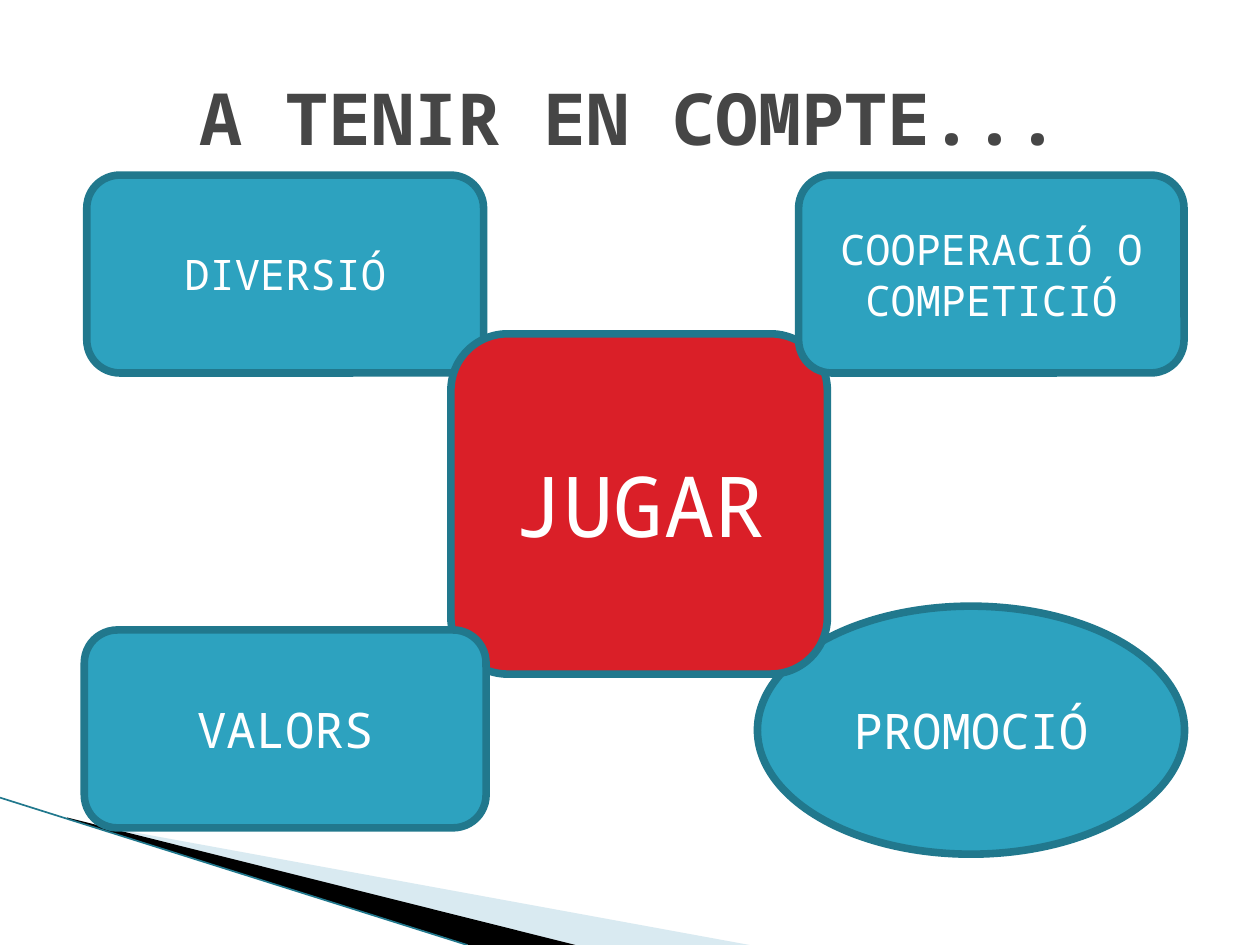
import pptx
import pptx.util
from lxml import etree
from pptx.dml.color import RGBColor
from pptx.enum.shapes import MSO_CONNECTOR, MSO_SHAPE
from pptx.enum.text import MSO_ANCHOR, PP_ALIGN
from pptx.oxml.ns import qn
from pptx.util import Cm

FONT = "Noto Sans Mono"
TEAL = RGBColor(0x2D, 0xA2, 0xBF)
DARK_TEAL = RGBColor(0x21, 0x78, 0x8D)
RED = RGBColor(0xDA, 0x1F, 0x28)
PALE_BLUE = RGBColor(0xA0, 0xCB, 0xDC)
BLACK = RGBColor(0, 0, 0)
WHITE = RGBColor(0xFF, 0xFF, 0xFF)
GREY = RGBColor(0x46, 0x46, 0x46)

TITLE = "A TENIR EN COMPTE..."
TITLE_BOX = (1.27, 0.76, 22.86, 3.18)

# Text, outline, fill, font size, (left, top, width, height) in cm
IDEAS = [
    ("DIVERSIÓ", MSO_SHAPE.ROUNDED_RECTANGLE, TEAL, 24, (1.75, 3.53, 8, 3.99)),
    ("PROMOCIÓ", MSO_SHAPE.OVAL, TEAL, 28, (15.27, 12.22, 8.61, 5)),
    ("JUGAR", MSO_SHAPE.ROUNDED_RECTANGLE, RED, 48, (9.09, 6.73, 7.59, 6.86)),
    ("VALORS", MSO_SHAPE.ROUNDED_RECTANGLE, TEAL, 28, (1.7, 12.7, 8.1, 3.99)),
    ("COOPERACIÓ O COMPETICIÓ", MSO_SHAPE.ROUNDED_RECTANGLE, TEAL, 24,
     (16.1, 3.53, 7.77, 3.99)),
]

# Fill, opacity in percent, corners in cm
WEDGES = [
    (PALE_BLUE, 40, [(1.4, 16.54), (15.11, 19.05), (11.58, 19.05), (1.4, 16.51)]),
    (BLACK, 100, [(1.35, 16.48), (11.6, 19.05), (9.45, 19.05), (1.37, 16.51)]),
]
EDGE = (0, 16.08, 9.42, 19.05)


def lengths(values):
    return [Cm(value) for value in values]


def write_text(shape, text, size, color, bold=False):
    frame = shape.text_frame
    frame.word_wrap = True
    frame.vertical_anchor = MSO_ANCHOR.MIDDLE
    frame.text = text
    paragraph = frame.paragraphs[0]
    paragraph.alignment = PP_ALIGN.CENTER
    paragraph.font.name = FONT
    paragraph.font.size = pptx.util.Pt(size)
    paragraph.font.bold = bold
    paragraph.font.color.rgb = color


def add_wedge(slide, color, opacity, corners):
    start, *others = [lengths(corner) for corner in corners]
    builder = slide.shapes.build_freeform(*start)
    builder.add_line_segments(others, close=True)
    wedge = builder.convert_to_shape()
    wedge.shadow.inherit = False
    wedge.line.fill.background()
    wedge.fill.solid()
    wedge.fill.fore_color.rgb = color
    if opacity < 100:
        color_element = wedge.fill._xPr.find(qn("a:solidFill"))[0]
        etree.SubElement(color_element, qn("a:alpha"), val=str(opacity * 1000))


def add_edge(slide):
    edge = slide.shapes.add_connector(MSO_CONNECTOR.STRAIGHT, *lengths(EDGE))
    edge.line.color.rgb = DARK_TEAL
    edge.line.width = pptx.util.Pt(0.95)
    etree.SubElement(edge._element.spPr, qn("a:effectLst"))


def add_idea(slide, text, outline, color, size, box):
    shape = slide.shapes.add_shape(outline, *lengths(box))
    shape.shadow.inherit = False
    shape.fill.solid()
    shape.fill.fore_color.rgb = color
    shape.line.color.rgb = DARK_TEAL
    shape.line.width = pptx.util.Pt(4.33)
    write_text(shape, text, size, WHITE)


def main():
    presentation = pptx.Presentation()
    presentation.slide_width = Cm(25.4)
    presentation.slide_height = Cm(19.05)
    slide = presentation.slides.add_slide(presentation.slide_layouts[5])

    title = slide.shapes.title
    title.left, title.top, title.width, title.height = lengths(TITLE_BOX)
    write_text(title, TITLE, 41, GREY, bold=True)

    for wedge in WEDGES:
        add_wedge(slide, *wedge)
    add_edge(slide)
    for idea in IDEAS:
        add_idea(slide, *idea)

    presentation.save("out.pptx")


if __name__ == "__main__":
    main()
